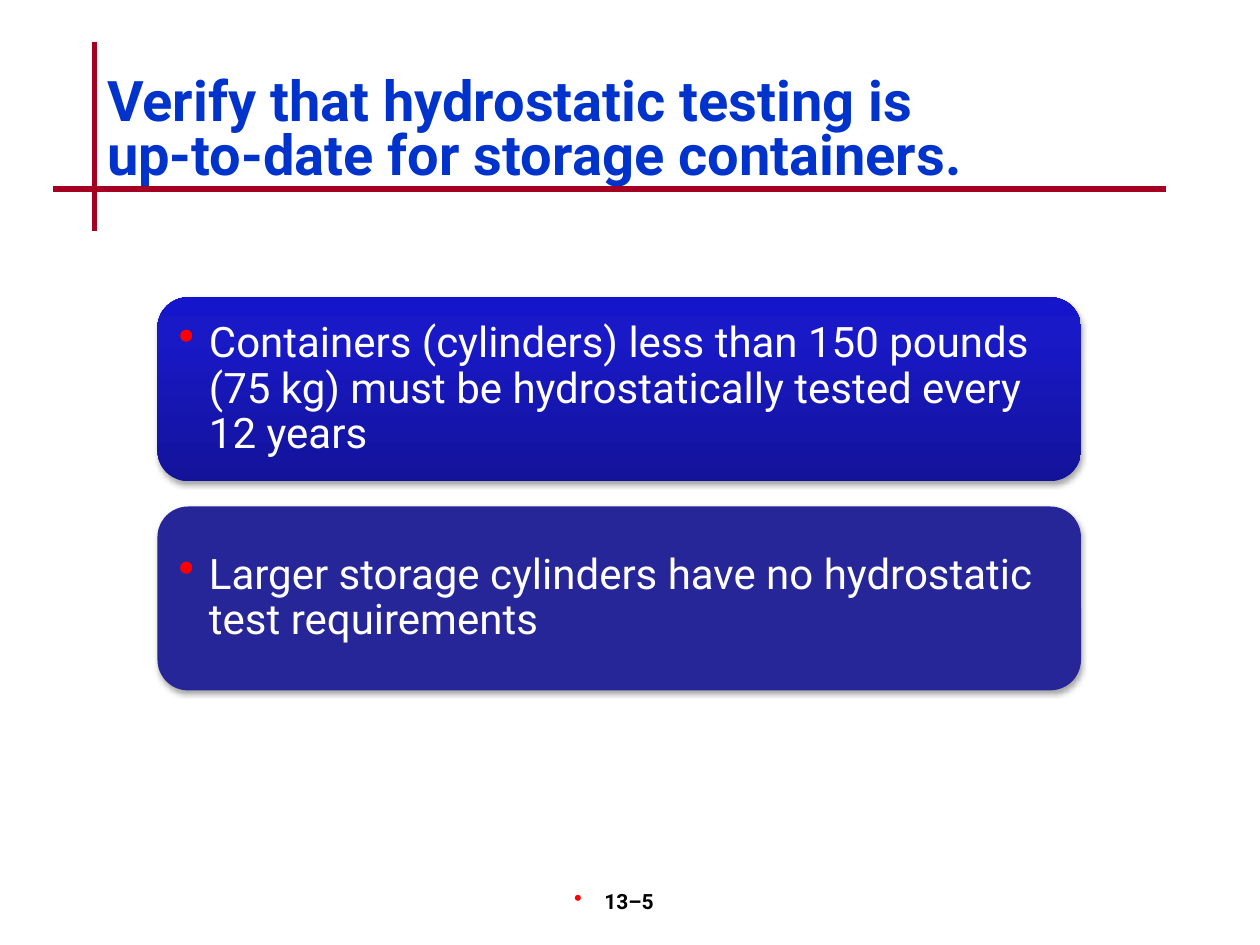
import copy

import pptx
import pptx.dml.color
import pptx.enum.shapes
import pptx.enum.text
import pptx.oxml
import pptx.oxml.ns
import pptx.util
from pptx.util import Inches

# Content
TITLE = "Verify that hydrostatic testing is\vup-to-date for storage containers."
PAGE_NUMBER = "13–5"
RULES = [((0.75, 0.33), (0.75, 1.83)), ((0.42, 1.5), (9.25, 1.5))]
# Each card: text, fill as a list of (position, colour) stops
CARDS = [
    ("Containers (cylinders) less than 150 pounds (75 kg) must be "
     "hydrostatically tested every 12 years",
     [(0, "13139A"), (0.8, "1919C8"), (1, "1515CC")]),
    ("Larger storage cylinders have no hydrostatic test requirements",
     [(0, "262699")]),
]

# Layout, in inches
CARD_LEFT, CARD_TOP, CARD_WIDTH, CARD_HEIGHT = 1.25, 2.36, 7.33, 1.46
CARD_GAP, CARD_PADDING = 0.2, 0.07

FONT = "Roboto"
BULLET_RED = "FF0000"
ALIGN = pptx.enum.text.PP_ALIGN
ANCHOR = pptx.enum.text.MSO_ANCHOR
NS = pptx.oxml.ns.nsdecls("a")


def color(hex_code):
    return pptx.dml.color.RGBColor.from_string(hex_code)


def add_xml(parent, xml):
    parent.append(pptx.oxml.parse_xml(xml))


def write(shape, text, size, ink, bold=False, align=ALIGN.LEFT, spacing=1.0,
          anchor=ANCHOR.TOP, inset_y=0.05, bullet=None):
    """Fill a shape with one paragraph; bullet is (left margin, hang, size %)."""
    frame = shape.text_frame
    frame.word_wrap = True
    frame.auto_size = pptx.enum.text.MSO_AUTO_SIZE.NONE
    frame.vertical_anchor = anchor
    frame.margin_left = frame.margin_right = Inches(0.1)
    frame.margin_top = frame.margin_bottom = Inches(inset_y)
    frame.text = text
    paragraph = frame.paragraphs[0]
    paragraph.alignment = align
    paragraph.line_spacing = spacing
    paragraph.space_before = pptx.util.Pt(0)
    if bullet:
        margin, hang, percent = bullet
        properties = paragraph._p.get_or_add_pPr()
        properties.set("marL", str(Inches(margin)))
        properties.set("indent", str(-Inches(hang)))
        add_xml(properties, f'<a:buClr {NS}><a:srgbClr val="{BULLET_RED}"/></a:buClr>')
        add_xml(properties, f'<a:buSzPct {NS} val="{percent * 1000}"/>')
        add_xml(properties, f'<a:buChar {NS} char="•"/>')
    for run in paragraph.runs:
        run.font.name = FONT
        run.font.size = pptx.util.Pt(size)
        run.font.bold = bold
        run.font.color.rgb = color(ink)


def fill_card(card, stops):
    if len(stops) == 1:
        card.fill.solid()
        card.fill.fore_color.rgb = color(stops[0][1])
        return
    card.fill.gradient()
    card.fill.gradient_angle = 90
    stop_list = card._element.spPr.find(".//" + pptx.oxml.ns.qn("a:gsLst"))
    while len(stop_list) < len(stops):
        stop_list.append(copy.deepcopy(stop_list[0]))
    for stop, (position, hex_code) in zip(card.fill.gradient_stops, stops):
        stop.position = position
        stop.color.rgb = color(hex_code)


def add_card_shadow(card):
    add_xml(card._element.spPr, f"""<a:effectLst {NS}>
        <a:outerShdw blurRad="{pptx.util.Pt(3.1)}" dist="{pptx.util.Pt(1.8)}"
            dir="5400000" rotWithShape="0">
          <a:srgbClr val="000000"><a:alpha val="35000"/></a:srgbClr>
        </a:outerShdw></a:effectLst>""")


def main():
    deck = pptx.Presentation()
    deck.slide_width, deck.slide_height = Inches(10), Inches(7.5)
    slide = deck.slides.add_slide(deck.slide_layouts[5])

    # Crossed rules
    for start, end in RULES:
        rule = slide.shapes.add_connector(
            pptx.enum.shapes.MSO_CONNECTOR.STRAIGHT,
            *(Inches(value) for value in start + end))
        rule.line.color.rgb = color("A50021")
        rule.line.width = pptx.util.Pt(3)
        add_xml(rule._element.spPr, f"<a:effectLst {NS}/>")

    # Title
    title = slide.shapes.title
    title.left, title.top = Inches(0.75), Inches(0.55)
    title.width, title.height = Inches(8.5), Inches(1)
    write(title, TITLE, 32, "0033CC", bold=True, spacing=0.8,
          anchor=ANCHOR.MIDDLE)

    # Cards
    for index, (statement, stops) in enumerate(CARDS):
        top = CARD_TOP + index * (CARD_HEIGHT + CARD_GAP)
        card = slide.shapes.add_shape(
            pptx.enum.shapes.MSO_SHAPE.ROUNDED_RECTANGLE, Inches(CARD_LEFT),
            Inches(top), Inches(CARD_WIDTH), Inches(CARD_HEIGHT))
        fill_card(card, stops)
        card.line.fill.background()
        add_card_shadow(card)
        label = slide.shapes.add_textbox(
            Inches(CARD_LEFT + CARD_PADDING), Inches(top + CARD_PADDING),
            Inches(CARD_WIDTH - 2 * CARD_PADDING),
            Inches(CARD_HEIGHT - 2 * CARD_PADDING))
        write(label, statement, 24, "FFFFFF", spacing=0.9,
              anchor=ANCHOR.MIDDLE, inset_y=0.1, bullet=(0.24, 0.24, 110))

    # Page number
    page = slide.shapes.add_textbox(Inches(3.92), Inches(7), Inches(2.08), Inches(0.5))
    write(page, PAGE_NUMBER, 12, "000000", bold=True, align=ALIGN.CENTER,
          bullet=(0.05, 0.24, 110))

    deck.save("out.pptx")


if __name__ == "__main__":
    main()
